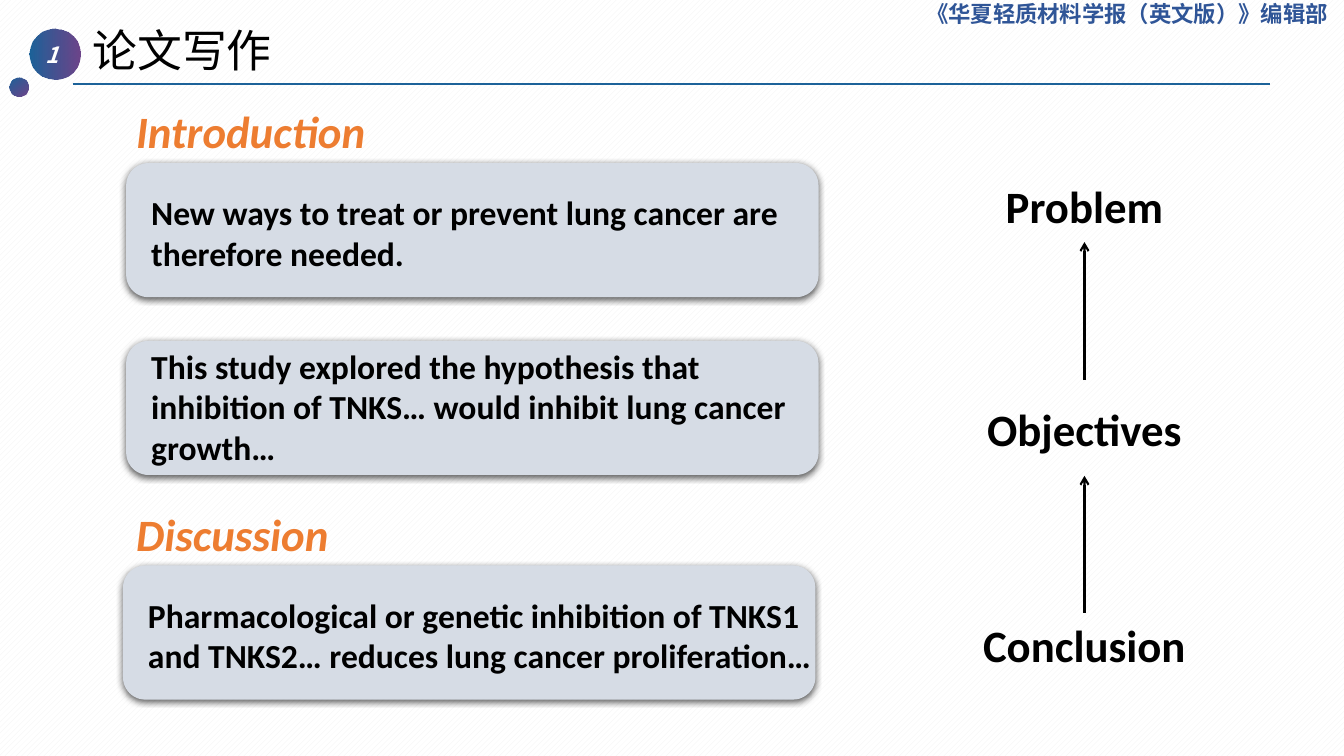
from dataclasses import dataclass

from lxml.etree import SubElement
from pptx import Presentation
from pptx.dml.color import RGBColor
from pptx.enum.dml import MSO_PATTERN
from pptx.enum.shapes import MSO_CONNECTOR, MSO_SHAPE
from pptx.enum.text import PP_ALIGN
from pptx.oxml.ns import qn
from pptx.shapes.autoshape import Shape
from pptx.slide import Slide
from pptx.util import Cm, Pt

COLORS = {
    "blue": "1C6299", "purple": "5C307D", "header": "2F5597",
    "orange": "ED7D31", "card": "D6DCE5", "black": "000000",
    "white": "FFFFFF", "stripe": "F2F2F2",
}
LATIN, CJK = "Calibri", "Noto Sans CJK SC"
CARD_W, CARD_H = 17.45, 3.38
STEP_X, STEP_W = 27.33, 8.0


@dataclass
class Card:
    x: float
    y: float
    text: str
    text_dy: float
    text_w: float


@dataclass
class Dot:
    x: float
    y: float
    size: float
    angle: float


CARDS = [
    Card(3.18, 4.11, "New ways to treat or prevent lung cancer are therefore needed.",
         0.61, 16.76),
    Card(3.18, 8.59, "This study explored the hypothesis that inhibition of TNKS… "
         "would inhibit lung cancer growth…", 0, 16.94),
    Card(3.1, 14.25, "Pharmacological or genetic inhibition of TNKS1 and TNKS2… "
         "reduces lung cancer proliferation…", 0.61, 17.25),
]
DOTS = [Dot(0.74, 0.71, 1.3, 0), Dot(0.25, 1.95, 0.48, 50)]
HEADINGS = [("Introduction", 2.49), ("Discussion", 12.65)]
STEPS = [("Problem", 4.39), ("Objectives", 10.01), ("Conclusion", 15.44)]
ARROWS = [(15.44, 11.99), (9.58, 6.1)]  # bottom, top


def rgb(name: str) -> RGBColor:
    return RGBColor.from_string(COLORS[name])


def add_text(s: Slide, text: str, x: float, y: float, w: float, h: float = 1.63, *,
             size: int = 32, font: str = LATIN, color: str = "black",
             bold: bool = True, italic: bool = False,
             align: PP_ALIGN = PP_ALIGN.LEFT) -> None:
    tf = s.shapes.add_textbox(Cm(x), Cm(y), Cm(w), Cm(h)).text_frame
    tf.word_wrap = True
    p = tf.paragraphs[0]
    p.alignment = align
    r = p.add_run()
    r.text = text
    f = r.font
    f.name, f.size, f.bold, f.italic = font, Pt(size), bold, italic
    f.color.rgb = rgb(color)
    SubElement(r._r.get_or_add_rPr(), qn("a:ea"), typeface=font)


def add_plain_shape(s: Slide, kind: MSO_SHAPE, x: float, y: float,
                    w: float, h: float) -> Shape:
    sp = s.shapes.add_shape(kind, Cm(x), Cm(y), Cm(w), Cm(h))
    sp.line.fill.background()
    sp.shadow.inherit = False
    return sp


def add_dot(s: Slide, dot: Dot) -> None:
    sp = add_plain_shape(s, MSO_SHAPE.OVAL, dot.x, dot.y, dot.size, dot.size)
    sp.fill.gradient()
    sp.fill.gradient_angle = -dot.angle % 360
    for stop, pos, color in zip(sp.fill.gradient_stops, (0, 1), ("blue", "purple")):
        stop.position = pos
        stop.color.rgb = rgb(color)
    last = sp._element.spPr.findall(".//" + qn("a:srgbClr"))[-1]
    SubElement(last, qn("a:alpha"), val="90000")


def add_card(s: Slide, card: Card) -> None:
    sp = add_plain_shape(s, MSO_SHAPE.ROUNDED_RECTANGLE, card.x, card.y, CARD_W, CARD_H)
    sp.fill.solid()
    sp.fill.fore_color.rgb = rgb("card")
    effects = sp._element.spPr.find(qn("a:effectLst"))
    shadow = SubElement(effects, qn("a:outerShdw"), blurRad=str(Pt(4.5)),
                        dist=str(Pt(1.5)), dir="5400000", rotWithShape="0")
    color = SubElement(shadow, qn("a:srgbClr"), val=COLORS["black"])
    SubElement(color, qn("a:alpha"), val="63000")
    add_text(s, card.text, card.x + 0.38, card.y + card.text_dy, card.text_w,
             CARD_H - 2 * card.text_dy, size=24)


def add_line(s: Slide, x1: float, y1: float, x2: float, y2: float,
             color: str, width: float, arrow: bool = False) -> None:
    c = s.shapes.add_connector(MSO_CONNECTOR.STRAIGHT, Cm(x1), Cm(y1), Cm(x2), Cm(y2))
    c.line.color.rgb = rgb(color)
    c.line.width = Pt(width)
    if arrow:
        SubElement(c.line._get_or_add_ln(), qn("a:tailEnd"), type="arrow")
    SubElement(c._element.spPr, qn("a:effectLst"))


def main() -> None:
    prs = Presentation()
    prs.slide_width, prs.slide_height = Cm(33.87), Cm(19.05)
    s = prs.slides.add_slide(prs.slide_layouts[6])

    # Striped background
    fill = s.background.fill
    fill.patterned()
    fill.pattern = MSO_PATTERN.WIDE_UPWARD_DIAGONAL
    fill.fore_color.rgb = rgb("stripe")
    fill.back_color.rgb = rgb("white")

    # Title bar
    add_text(s, "论文写作", 2.08, 0.46, 9.5, font=CJK, bold=False)
    add_line(s, 1.83, 2.11, 32, 2.11, "blue", 1.75)
    for dot in DOTS:
        add_dot(s, dot)
    add_text(s, "1", 0.38, 0.91, 1.88, 0.94, size=16, font=CJK, color="white",
             italic=True, align=PP_ALIGN.CENTER)
    add_text(s, "《华夏轻质材料学报（英文版）》编辑部", 23.09, -0.13, 10.77,
             size=16, font=CJK, color="header")

    # Paper sections
    for text, y in HEADINGS:
        add_text(s, text, 3.18, y, 9, color="orange", italic=True)
    for card in CARDS:
        add_card(s, card)

    # Chain from conclusion up to problem
    for text, y in STEPS:
        add_text(s, text, STEP_X - STEP_W / 2, y, STEP_W, align=PP_ALIGN.CENTER)
    for bottom, top in ARROWS:
        add_line(s, STEP_X, bottom, STEP_X, top, "black", 1.5, arrow=True)

    prs.save("out.pptx")


if __name__ == "__main__":
    main()
